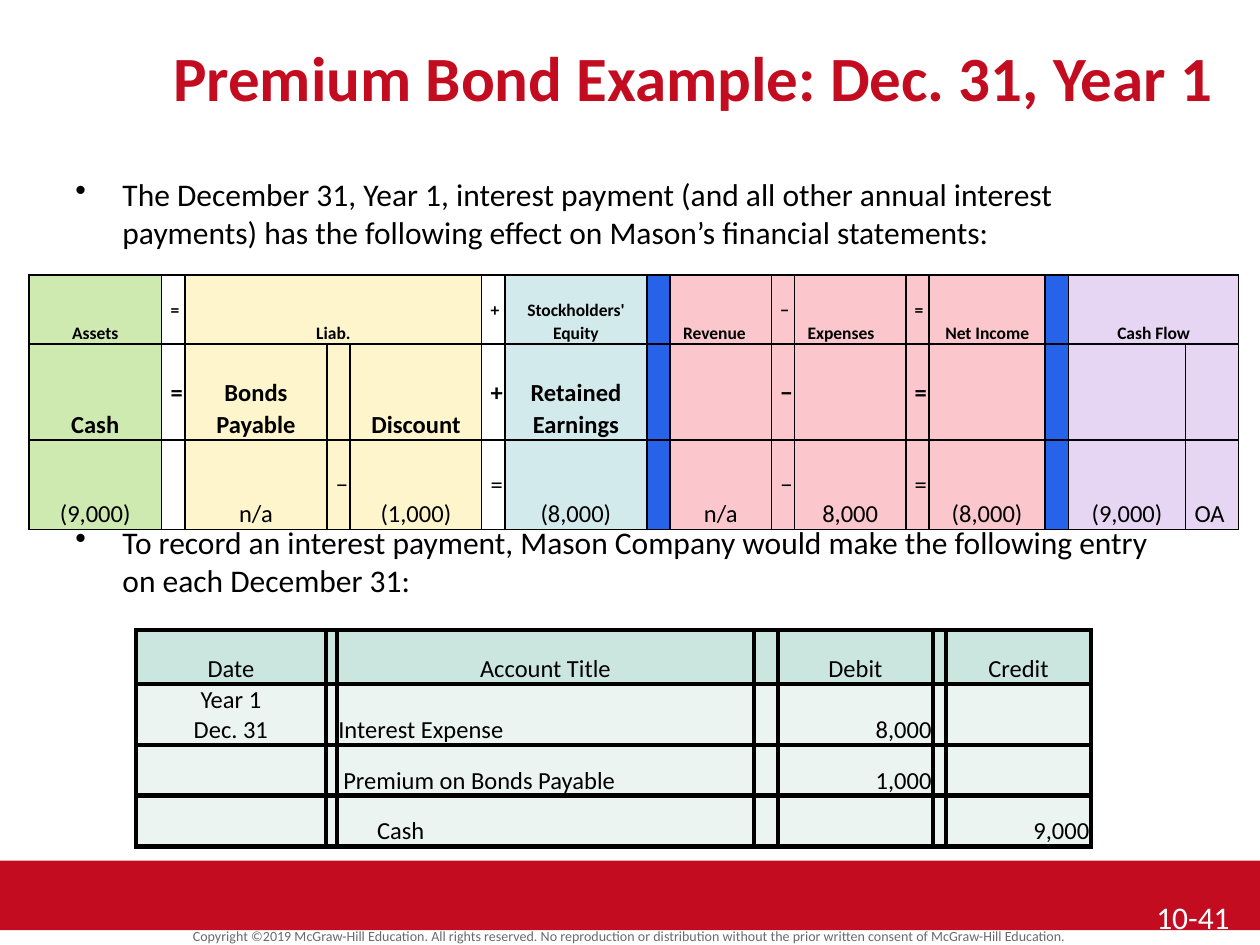
from dataclasses import dataclass

from lxml.etree import SubElement
from pptx import Presentation
from pptx.dml.color import RGBColor
from pptx.enum.shapes import MSO_SHAPE
from pptx.enum.text import MSO_ANCHOR as Anchor, PP_ALIGN as Align
from pptx.oxml.ns import qn
from pptx.util import Cm, Pt

FONT = "Calibri"
COLORS = {
    "red": "C30C20", "black": "000000", "white": "FFFFFF", "gray": "6A6A6A",
    "green": "CEEAB0", "yellow": "FFF5CC", "aqua": "D3EAED", "blue": "2763E9",
    "pink": "FBC6CC", "lilac": "E6D5F3", "mint": "CAE6DE", "pale": "ECF4F1",
}
OPERATORS = {"=", "+", "−"}


@dataclass
class Entry:
    text: str = ""
    align: Align = Align.CENTER
    indent: float = 0


@dataclass
class RowStyle:
    height: float
    size: int = 14
    bold: bool = False
    line_spacing: float = 1.0


@dataclass
class Grid:
    left: float
    top: float
    widths: list[float]
    styles: list[RowStyle]
    fills: list[list[str | None]]
    entries: list[list[Entry]]
    border: float
    insets: tuple[float, float, float]  # sides, top, bottom
    merges: list[tuple[int, int, int]]  # row, first column, last column


def rgb(name: str) -> RGBColor:
    return RGBColor.from_string(COLORS[name])


def style_font(para, size: int, color: str = "black", bold: bool = False) -> None:
    font = para.font
    font.name, font.size, font.bold = FONT, Pt(size), bold
    font.color.rgb = rgb(color)


def add_text(page, text: str, left: float, top: float, width: float, height: float,
             size: int, color: str = "black"):
    frame = page.shapes.add_textbox(Cm(left), Cm(top), Cm(width), Cm(height)).text_frame
    frame.word_wrap = True
    frame.text = text
    for para in frame.paragraphs:
        style_font(para, size, color)
    return frame


def add_bullets(page, items: list[str], gap: float) -> None:
    frame = add_text(page, "\n".join(items), 1.27, 3.4, 22.86, 13.1, 18)
    for index, para in enumerate(frame.paragraphs):
        props = para._p.get_or_add_pPr()
        props.set("marL", str(Cm(0.95)))
        props.set("indent", str(Cm(-0.95)))
        bullet = props.makeelement(qn("a:buChar"), {"char": "•"})
        props.insert(0, bullet)
        if index:
            para.space_before = Pt(gap)


def add_borders(cell, width: float) -> None:
    props = cell._tc.get_or_add_tcPr()
    for side in ("lnL", "lnR", "lnT", "lnB"):
        line = SubElement(props, qn(f"a:{side}"), w=str(Pt(width)))
        fill = SubElement(line, qn("a:solidFill"))
        SubElement(fill, qn("a:srgbClr"), val=COLORS["black"])


def fill_cell(cell, entry: Entry, style: RowStyle, color: str | None, grid: Grid) -> None:
    add_borders(cell, grid.border)
    if color:
        cell.fill.solid()
        cell.fill.fore_color.rgb = rgb(color)
    else:
        cell.fill.background()
    sides, top, bottom = grid.insets
    cell.margin_left = cell.margin_right = Cm(sides)
    cell.margin_top, cell.margin_bottom = Cm(top), Cm(bottom)
    cell.vertical_anchor = Anchor.MIDDLE if entry.text in OPERATORS else Anchor.BOTTOM
    cell.text = entry.text
    for para in cell.text_frame.paragraphs:
        para.alignment = entry.align
        para.line_spacing = style.line_spacing
        if entry.indent:
            para._p.get_or_add_pPr().set("marL", str(Cm(entry.indent)))
        style_font(para, style.size, bold=style.bold)


def add_grid(page, grid: Grid) -> None:
    height = sum(style.height for style in grid.styles)
    table = page.shapes.add_table(len(grid.styles), len(grid.widths), Cm(grid.left), Cm(grid.top),
                                  Cm(sum(grid.widths)), Cm(height)).table
    table.first_row = table.horz_banding = False
    for column, width in zip(table.columns, grid.widths):
        column.width = Cm(width)
    for r, (style, entries, fills) in enumerate(zip(grid.styles, grid.entries, grid.fills)):
        table.rows[r].height = Cm(style.height)
        for c, (entry, color) in enumerate(zip(entries, fills)):
            fill_cell(table.cell(r, c), entry, style, color, grid)
    for row, first, last in grid.merges:
        table.cell(row, first).merge(table.cell(row, last))


def statement_grid() -> Grid:
    sign = 0.47
    fills = ["green", None, *["yellow"] * 3, None, "aqua", "blue",
             *["pink"] * 5, "blue", "lilac", "lilac"]
    texts = [
        ["Assets", "=", "Liab.", "", "", "+", "Stockholders' Equity", "",
         "Revenue", "−", "Expenses", "=", "Net Income", "", "Cash Flow", ""],
        ["Cash", "=", "Bonds Payable", "", "Discount", "+", "Retained Earnings", "",
         "", "−", "", "=", "", "", "", ""],
        ["(9,000)", "", "n/a", "−", "(1,000)", "=", "(8,000)", "",
         "n/a", "−", "8,000", "=", "(8,000)", "", "(9,000)", "OA"],
    ]
    left_aligned = {"Revenue": 0.08, "Expenses": 0.08, "OA": 0}
    entries = [[Entry(text, Align.LEFT, left_aligned[text]) if text in left_aligned
                else Entry(text) for text in row] for row in texts]
    return Grid(
        0.58, 5.54,
        [2.68, sign, 2.86, sign, 2.65, sign, 2.86, sign, 2.04, sign, 2.24, sign,
         2.34, sign, 2.36, 1.07],
        [RowStyle(1.4, 10, True, 1.07), RowStyle(1.93, 14, True, 1.07), RowStyle(1.8)],
        [fills] * 3, entries, 1, (0.18, 0, 0), [(0, 2, 4), (0, 14, 15)])


def journal_grid() -> Grid:
    lines = [  # date, account, indent, debit, credit
        ("Year 1\nDec. 31", "Interest Expense", 0, "8,000", ""),
        ("", "Premium on Bonds Payable", 0.1, "1,000", ""),
        ("", "Cash", 0.78, "", "9,000"),
    ]
    entries = [[Entry(text) for text in
                ("Date", "", "Account Title", "", "Debit", "", "Credit")]]
    for date, account, indent, debit, credit in lines:
        entries.append([Entry(date), Entry(), Entry(account, Align.LEFT, indent), Entry(),
                        Entry(debit, Align.RIGHT), Entry(), Entry(credit, Align.RIGHT)])
    return Grid(
        2.74, 12.7, [3.83, 0.22, 8.41, 0.48, 3.13, 0.26, 2.92],
        [RowStyle(height) for height in (1.09, 1.23, 1.02, 1.02)],
        [["mint"] * 7] + [["pale"] * 7] * 3, entries, 3, (0.03, 0.03, 0), [])


def add_title(page, text: str) -> None:
    title = page.shapes.title
    title.left, title.top, title.width, title.height = Cm(2.54), Cm(0.64), Cm(22.86), Cm(1.7)
    frame = title.text_frame
    frame.text = text
    frame.vertical_anchor = Anchor.TOP
    frame.paragraphs[0].alignment = Align.CENTER
    style_font(frame.paragraphs[0], 36, "red", True)


def add_footer(page) -> None:
    band = page.shapes.add_shape(MSO_SHAPE.RECTANGLE, 0, Cm(17.35), Cm(25.4), Cm(1.4))
    band.shadow.inherit = False
    band.fill.solid()
    band.fill.fore_color.rgb = rgb("red")
    band.line.fill.background()
    notice = add_text(
        page, "Copyright ©2019 McGraw-Hill Education. All rights reserved. No reproduction or "
        "distribution without the prior written consent of McGraw-Hill Education.",
        0, 18.64, 25.4, 0.48, 8, "gray").paragraphs[0]
    notice.alignment = Align.CENTER
    notice.line_spacing = 0.8
    add_text(page, "10-41", 23.06, 17.98, 2.34, 1.07, 18, "white")


def main() -> None:
    deck = Presentation()
    deck.slide_width, deck.slide_height = Cm(25.4), Cm(19.05)
    page = deck.slides.add_slide(deck.slide_layouts[5])
    add_footer(page)
    add_title(page, "Premium Bond Example: Dec. 31, Year 1")
    add_bullets(page, [
        "The December 31, Year 1, interest payment (and all other annual interest payments) "
        "has the following effect on Mason’s financial statements:",
        "To record an interest payment, Mason Company would make the following entry "
        "on each December 31:",
    ], gap=156)
    add_grid(page, statement_grid())
    add_grid(page, journal_grid())
    deck.save("out.pptx")


if __name__ == "__main__":
    main()
